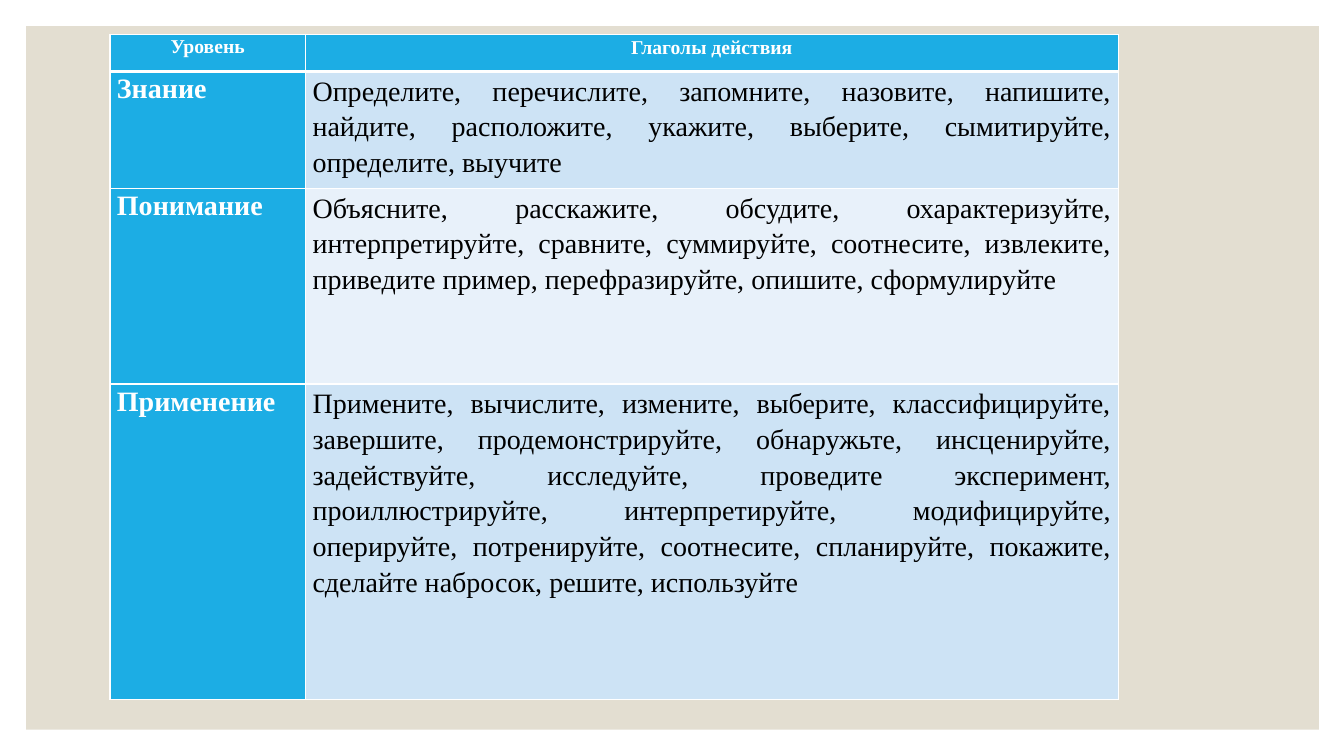
import pptx
import pptx.dml.color
import pptx.enum.shapes
import pptx.enum.text
import pptx.oxml
import pptx.oxml.ns
import pptx.util
from pptx.util import Inches

COLORS = {
    "white": "FFFFFF",
    "black": "000000",
    "backdrop": "E3DED1",
    "accent": "1CADE4",
    "band": "CDE3F5",
    "light band": "E8F1FA",
}
FONT = "Times New Roman"
HEADER = ("Уровень", "Глаголы действия")
LEVELS = [
    ("Знание",
     "Определите, перечислите, запомните, назовите, напишите, найдите, "
     "расположите, укажите, выберите, сымитируйте, определите, выучите"),
    ("Понимание",
     "Объясните, расскажите, обсудите, охарактеризуйте, интерпретируйте, "
     "сравните, суммируйте, соотнесите, извлеките, приведите пример, "
     "перефразируйте, опишите, сформулируйте"),
    ("Применение",
     "Примените, вычислите, измените, выберите, классифицируйте, завершите, "
     "продемонстрируйте, обнаружьте, инсценируйте, задействуйте, исследуйте, "
     "проведите эксперимент, проиллюстрируйте, интерпретируйте, "
     "модифицируйте, оперируйте, потренируйте, соотнесите, спланируйте, "
     "покажите, сделайте набросок, решите, используйте"),
]
COLUMN_WIDTHS = (1.94, 8.06)
ROW_HEIGHTS = (0.37, 1.16, 1.94, 3.13)


def rgb(name):
    return pptx.dml.color.RGBColor.from_string(COLORS[name])


def add_backdrop(page, left, top, width, height):
    backdrop = page.shapes.add_shape(
        pptx.enum.shapes.MSO_SHAPE.RECTANGLE,
        Inches(left), Inches(top), Inches(width), Inches(height))
    backdrop.shadow.inherit = False
    backdrop.fill.solid()
    backdrop.fill.fore_color.rgb = rgb("backdrop")
    backdrop.line.fill.background()


def set_borders(cell, top, bottom):
    """Draw white borders; top and bottom are widths in points."""
    widths = {"lnL": 1, "lnR": 1, "lnT": top, "lnB": bottom}
    properties = cell._tc.get_or_add_tcPr()
    for position, (side, width) in enumerate(widths.items()):
        properties.insert(position, pptx.oxml.parse_xml(
            f'<a:{side} {pptx.oxml.ns.nsdecls("a")} w="{pptx.util.Pt(width)}">'
            f'<a:solidFill><a:srgbClr val="{COLORS["white"]}"/></a:solidFill>'
            f'</a:{side}>'))


def fill_cell(cell, text, row, column):
    is_header = row == 0
    is_label = is_header or column == 0
    cell.margin_left = cell.margin_right = Inches(0.07)
    cell.margin_top = cell.margin_bottom = 0
    cell.fill.solid()
    band = "band" if row % 2 else "light band"
    cell.fill.fore_color.rgb = rgb("accent" if is_label else band)
    set_borders(cell, 3 if row == 1 else 1, 3 if is_header else 1)

    para = cell.text_frame.paragraphs[0]
    align = pptx.enum.text.PP_ALIGN
    para.alignment = align.CENTER if is_header else align.JUSTIFY
    para.line_spacing = (1.07, 1.15)[column]
    span = para.add_run()
    span.text = text
    span.font.name = FONT
    span.font.size = pptx.util.Pt(14 if is_header else 20)
    span.font.bold = is_label
    span.font.color.rgb = rgb("white" if is_label else "black")


def add_verb_table(page, left, top):
    rows = [HEADER, *LEVELS]
    table = page.shapes.add_table(
        len(rows), len(HEADER), Inches(left), Inches(top),
        Inches(sum(COLUMN_WIDTHS)), Inches(sum(ROW_HEIGHTS))).table
    for column, width in zip(table.columns, COLUMN_WIDTHS):
        column.width = Inches(width)
    for row, height in zip(table.rows, ROW_HEIGHTS):
        row.height = Inches(height)
    for row, texts in enumerate(rows):
        for column, text in enumerate(texts):
            fill_cell(table.cell(row, column), text, row, column)


def main():
    deck = pptx.Presentation()
    deck.slide_width, deck.slide_height = Inches(13.33), Inches(7.5)
    page = deck.slides.add_slide(deck.slide_layouts[6])
    page.background.fill.solid()
    page.background.fill.fore_color.rgb = rgb("white")
    add_backdrop(page, 0.26, 0.26, 12.82, 6.98)
    add_verb_table(page, 1.09, 0.34)
    deck.save("out.pptx")


if __name__ == "__main__":
    main()
